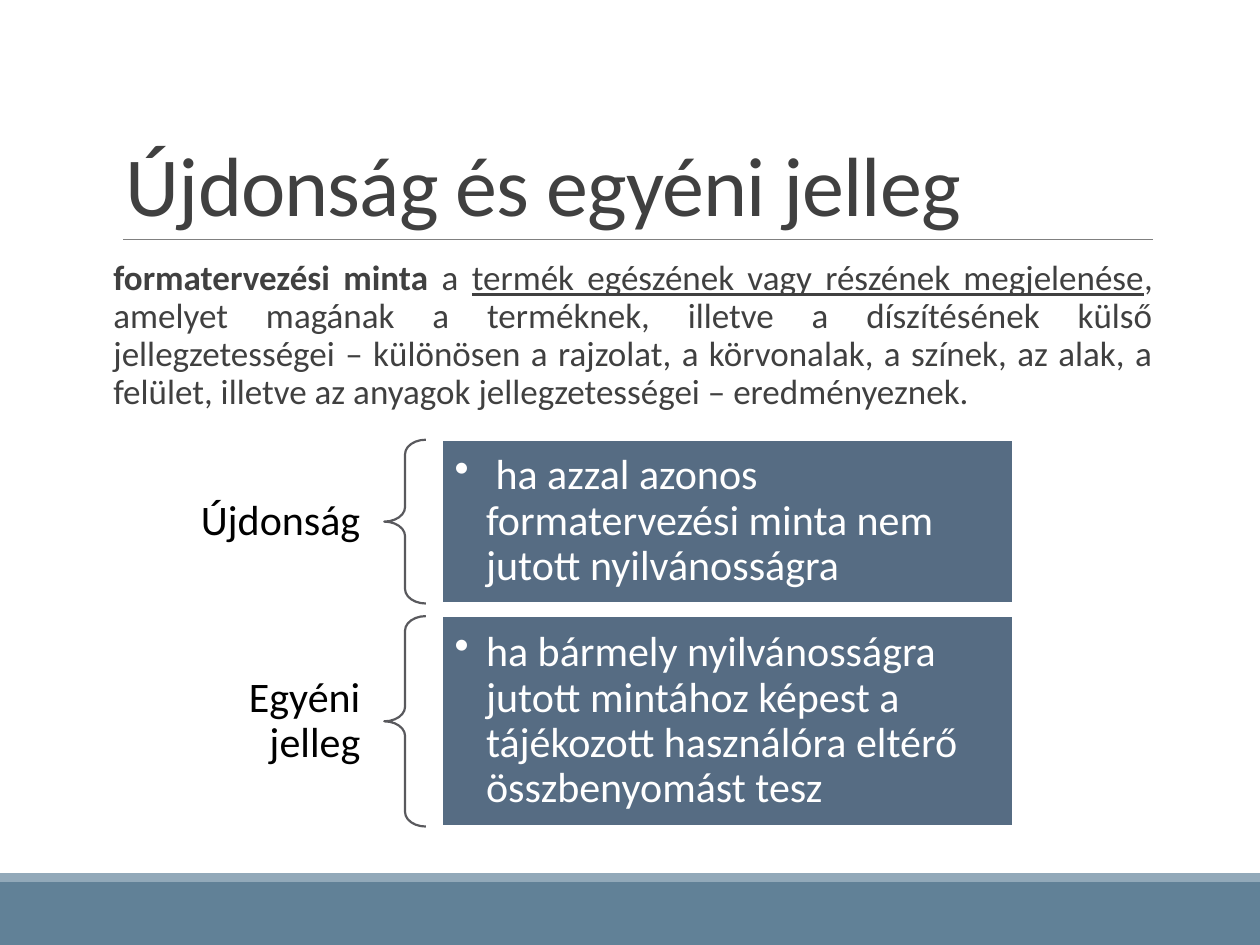
"""Build the slide on novelty and individual character of designs."""
from lxml import etree
from pptx import Presentation, util as u
from pptx.dml.color import RGBColor
from pptx.enum import shapes, text
from pptx.oxml.ns import qn

HUES = {"band": "618197", "strip": "92A9B9", "rule": "808080", "ink": "404040",
        "label": "000000", "brace": "59595D", "card": "566C83", "white": "FFFFFF"}
KIND = shapes.MSO_SHAPE
ALIGN = text.PP_ALIGN
ANCHOR = text.MSO_ANCHOR

deck = Presentation()
deck.slide_width, deck.slide_height = u.Inches(10), u.Inches(7.5)
slide = deck.slides.add_slide(deck.slide_layouts[6])
pool = slide.shapes


def draw(kind, box, fill=None, line=None):
    item = pool.add_shape(kind, *map(u.Inches, box))
    item.shadow.inherit = False
    if fill:
        item.fill.solid()
        item.fill.fore_color.rgb = RGBColor.from_string(HUES[fill])
    else:
        item.fill.background()
    if line:
        item.line.color.rgb = RGBColor.from_string(HUES[line])
        item.line.width = u.Pt(1.25)
    else:
        item.line.fill.background()
    return item


def write(item, runs, size, hue, pads, anchor, form):
    frame = item.text_frame
    frame.word_wrap = True
    frame.vertical_anchor = anchor
    for side, pad in zip(("left", "top", "right", "bottom"), pads * 2):
        setattr(frame, "margin_" + side, u.Inches(pad))
    para = frame.paragraphs[0]
    for key, val in form.items():
        setattr(para, key, val)
    for words, looks in runs:
        run = para.add_run()
        run.text = words
        look = {"name": "Calibri", "size": u.Pt(size)} | looks
        for key, val in look.items():
            setattr(run.font, key, val)
        run.font.color.rgb = RGBColor.from_string(HUES[hue])
    return para


draw(KIND.RECTANGLE, (0, 7, 10, 0.5), "band")
draw(KIND.RECTANGLE, (0, 6.93, 10, 0.07), "strip")

rule = pool.add_connector(shapes.MSO_CONNECTOR.STRAIGHT,
                          *map(u.Inches, (0.98, 1.9, 9.15, 1.9)))
rule.line.color.rgb = RGBColor.from_string(HUES["rule"])
rule.line.width = u.Pt(0.5)
etree.SubElement(rule._element.spPr, qn("a:effectLst"))

title = pool.add_textbox(*map(u.Inches, (0.9, 0.31, 8.25, 1.59)))
head = write(title, [("Újdonság és egyéni jelleg", {})], 48, "ink", (0.1, 0.05),
             ANCHOR.BOTTOM, {"line_spacing": 0.85})
head.runs[0]._r.get_or_add_rPr().set("spc", "-50")

body = pool.add_textbox(*map(u.Inches, (0.9, 2.02, 8.25, 4.4)))
write(body, [
    ("formatervezési minta ", {"bold": True}),
    ("a ", {}),
    ("termék egészének vagy részének megjelenése", {"underline": True}),
    (", amelyet magának a terméknek, illetve a díszítésének külső jellegzetességei – "
     "különösen a rajzolat, a körvonalak, a színek, az alak, a felület, illetve az "
     "anyagok jellegzetességei – eredményeznek.", {}),
], 20, "ink", (0, 0.05), ANCHOR.TOP,
    {"alignment": ALIGN.JUSTIFY, "line_spacing": 0.9,
     "space_before": u.Pt(12), "space_after": u.Pt(2)})

rows = [
    ("Újdonság", 1.3, 0.52,
     " ha azzal azonos formatervezési minta nem jutott nyilvánosságra"),
    ("Egyéni jelleg", 1.67, 0.88,
     "ha bármely nyilvánosságra jutott mintához képest a tájékozott használóra "
     "eltérő összbenyomást tesz"),
]
top, gap = 3.49, 0.1
for name, high, tall, note in rows:
    label = pool.add_textbox(*map(u.Inches, (1.38, top + (high - tall) / 2, 1.67, tall)))
    write(label, [(name, {})], 24, "label", (0.19, 0.07), ANCHOR.MIDDLE,
          {"alignment": ALIGN.RIGHT, "line_spacing": 0.9})
    brace = draw(KIND.LEFT_BRACE, (3.05, top, 0.33, high), line="brace")
    brace.adjustments[0] = 0.35
    card = draw(KIND.RECTANGLE, (3.51, top, 4.53, high), "card", "white")
    para = write(card, [(note, {})], 24, "white", (0.1, 0.1), ANCHOR.MIDDLE,
                 {"alignment": ALIGN.LEFT, "line_spacing": 0.9})
    props = para._p.get_or_add_pPr()
    props.set("marL", str(u.Inches(0.25)))
    props.set("indent", str(u.Inches(-0.25)))
    etree.SubElement(props, qn("a:buChar"), char="•")
    top += high + gap

deck.save("out.pptx")
